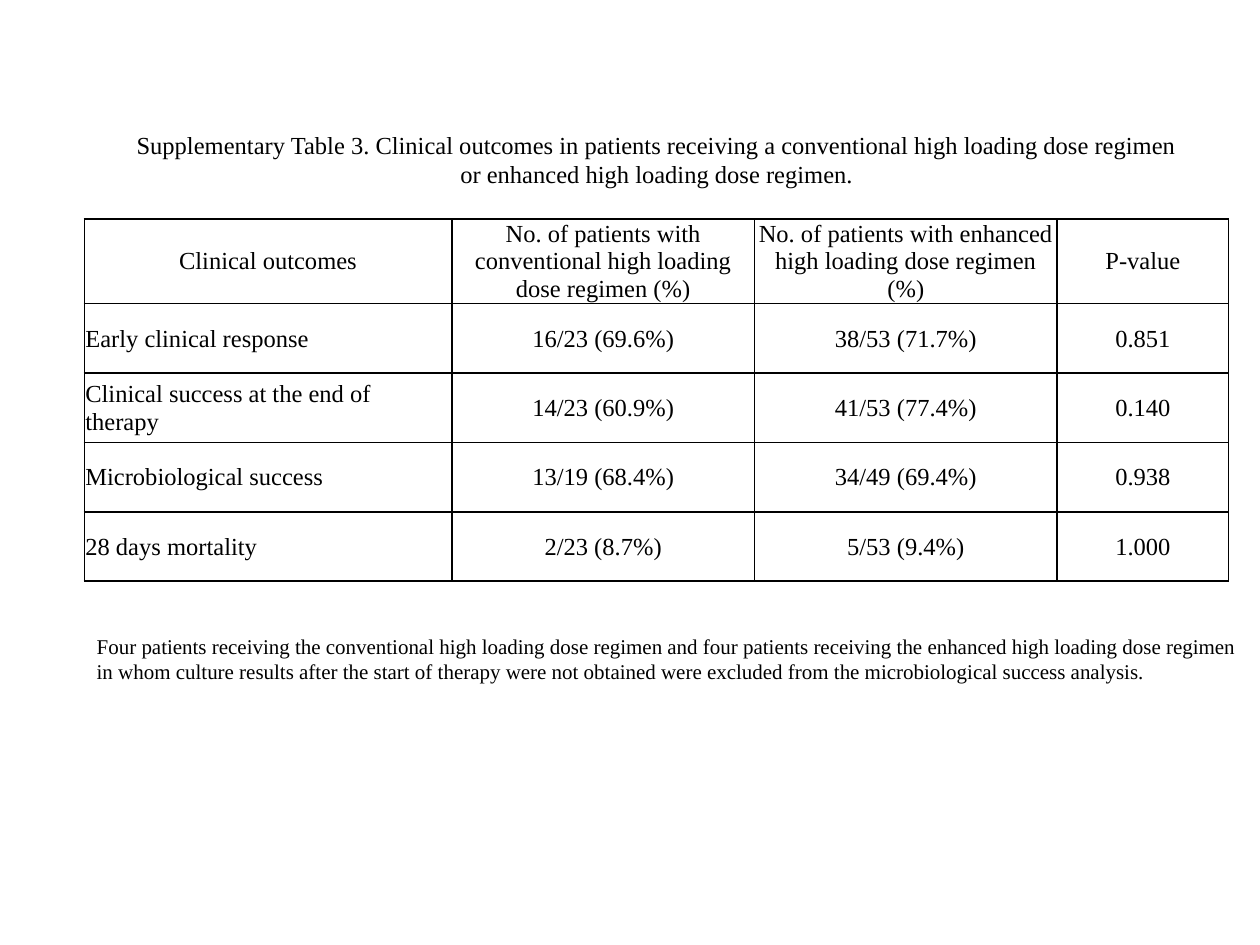
from dataclasses import dataclass

from lxml import etree
from pptx import Presentation
from pptx.dml.color import RGBColor
from pptx.enum.text import MSO_ANCHOR, MSO_AUTO_SIZE, PP_ALIGN
from pptx.oxml.ns import qn
from pptx.util import Cm, Pt

LEFT, CENTER = PP_ALIGN.LEFT, PP_ALIGN.CENTER
TOP, MIDDLE = MSO_ANCHOR.TOP, MSO_ANCHOR.MIDDLE
NO_AUTOFIT = MSO_AUTO_SIZE.NONE
TITLE_ONLY = 5


@dataclass(frozen=True)
class Theme:
    font: str = "Times New Roman"
    ink: str = "000000"
    body_size: int = 14
    note_size: int = 12
    border_width: int = 1


THEME = Theme()

TITLE = (
    "Supplementary Table 3. Clinical outcomes in patients receiving a conventional "
    "high loading dose regimen or enhanced high loading dose regimen."
)
NOTE = (
    "Four patients receiving the conventional high loading dose regimen and four "
    "patients receiving the enhanced high loading dose regimen in whom culture "
    "results after the start of therapy were not obtained were excluded from the "
    "microbiological success analysis."
)
OUTCOMES = [
    ("Clinical outcomes",
     "No. of patients with conventional high loading dose regimen (%)",
     "No. of patients with enhanced high loading dose regimen (%)",
     "P-value"),
    ("Early clinical response", "16/23 (69.6%)", "38/53 (71.7%)", "0.851"),
    ("Clinical success at the end of therapy", "14/23 (60.9%)", "41/53 (77.4%)", "0.140"),
    ("Microbiological success", "13/19 (68.4%)", "34/49 (69.4%)", "0.938"),
    ("28 days mortality", "2/23 (8.7%)", "5/53 (9.4%)", "1.000"),
]
COLUMN_WIDTHS = (7.41, 6.1, 6.1, 3.46)
HEADER_HEIGHT, ROW_HEIGHT = 1.71, 1.4


def write_text(text_frame, text, size, alignment):
    paragraph = text_frame.paragraphs[0]
    paragraph.alignment = alignment
    run = paragraph.add_run()
    run.text = text
    run.font.name = THEME.font
    run.font.size = Pt(size)
    run.font.color.rgb = RGBColor.from_string(THEME.ink)


def add_borders(cell):
    """Draw a solid line on all four sides of a cell."""
    properties = cell._tc.get_or_add_tcPr()
    for position, side in enumerate(("lnL", "lnR", "lnT", "lnB")):
        line = etree.Element(qn(f"a:{side}"), w=str(Pt(THEME.border_width)))
        fill = etree.SubElement(line, qn("a:solidFill"))
        etree.SubElement(fill, qn("a:srgbClr"), val=THEME.ink)
        properties.insert(position, line)


def place_title(slide, left, top, width, height):
    title = slide.shapes.title
    title.left, title.top = Cm(left), Cm(top)
    title.width, title.height = Cm(width), Cm(height)
    text_frame = title.text_frame
    text_frame.word_wrap = True
    text_frame.auto_size = NO_AUTOFIT
    text_frame.vertical_anchor = TOP
    write_text(text_frame, TITLE, THEME.body_size, CENTER)


def add_outcome_table(slide, left, top):
    row_heights = [HEADER_HEIGHT] + [ROW_HEIGHT] * (len(OUTCOMES) - 1)
    table = slide.shapes.add_table(
        len(OUTCOMES), len(COLUMN_WIDTHS), Cm(left), Cm(top),
        Cm(sum(COLUMN_WIDTHS)), Cm(sum(row_heights)),
    ).table
    table.first_row = table.horz_banding = False
    for column, width in zip(table.columns, COLUMN_WIDTHS):
        column.width = Cm(width)
    for row, height, texts in zip(table.rows, row_heights, OUTCOMES):
        row.height = Cm(height)
        for index, (cell, text) in enumerate(zip(row.cells, texts)):
            cell.fill.background()
            cell.vertical_anchor = MIDDLE
            cell.margin_left = cell.margin_right = cell.margin_top = Cm(0.02)
            cell.margin_bottom = 0
            is_label = index == 0 and texts is not OUTCOMES[0]
            write_text(cell.text_frame, text, THEME.body_size, LEFT if is_label else CENTER)
            add_borders(cell)


def add_note(slide, left, top, width, height):
    note = slide.shapes.add_textbox(Cm(left), Cm(top), Cm(width), Cm(height))
    note.text_frame.word_wrap = True
    write_text(note.text_frame, NOTE, THEME.note_size, LEFT)


def main():
    presentation = Presentation()
    presentation.slide_width, presentation.slide_height = Cm(25.4), Cm(19.05)
    slide = presentation.slides.add_slide(presentation.slide_layouts[TITLE_ONLY])

    # Title, table and footnote, from top to bottom
    place_title(slide, 2.34, 2.49, 21.8, 1.45)
    add_outcome_table(slide, 1.7, 4.41)
    add_note(slide, 1.7, 12.65, 23.6, 1.27)

    presentation.save("out.pptx")


if __name__ == "__main__":
    main()
